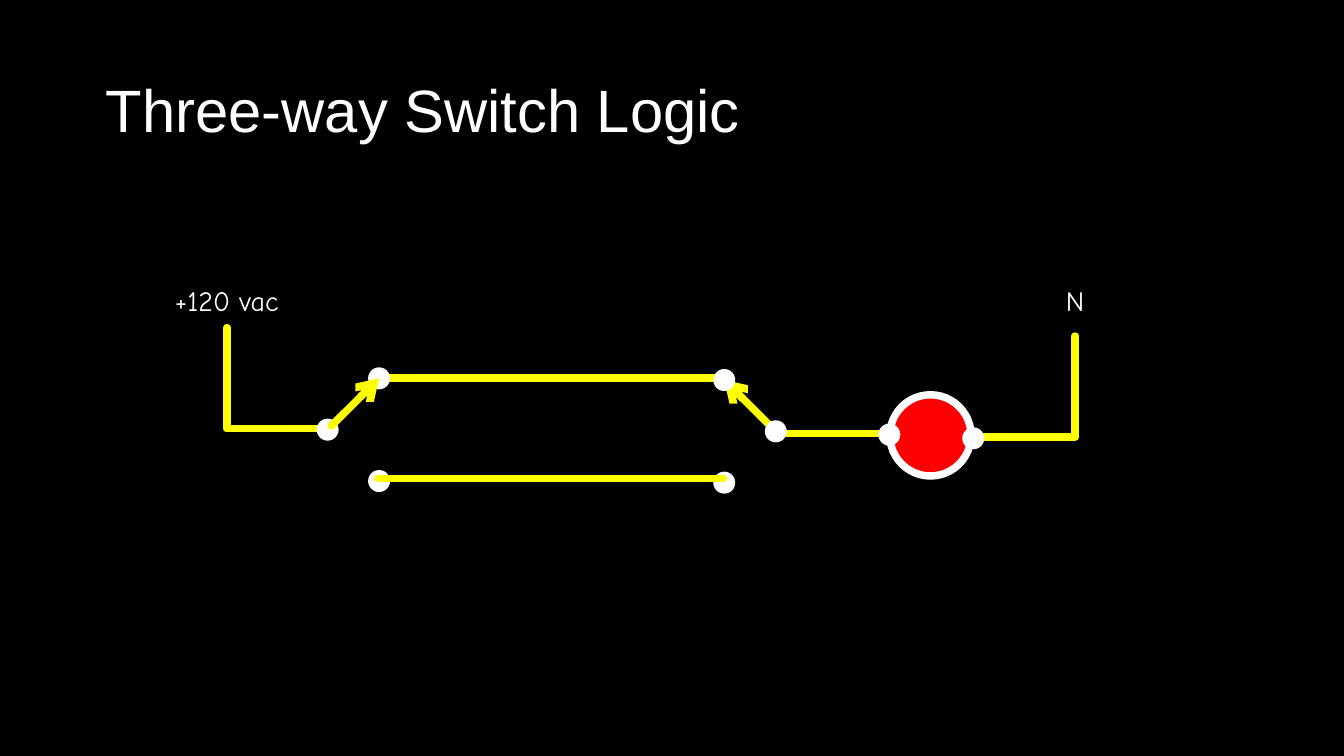
from pptx import Presentation
from pptx.dml.color import RGBColor
from pptx.enum.shapes import MSO_CONNECTOR as CONN, MSO_SHAPE as SHAPE
from pptx.enum.text import MSO_ANCHOR as ANCHOR, MSO_AUTO_SIZE as FIT, PP_ALIGN as ALIGN
from pptx.oxml.ns import qn
from pptx.util import Pt
from lxml.etree import SubElement

WHITE, YELLOW, RED, BLACK = "FFFFFF", "FFFF00", "FF0000", "000000"
DOT = 10.8


def color(value):
    """Turn a hex string into a colour."""
    return RGBColor.from_string(value)


def write(tf, text, para, font, ink):
    """Put one formatted paragraph into a text frame."""
    p = tf.paragraphs[0]
    r = p.add_run()
    r.text = text
    for target, values in ((p, para), (r.font, font)):
        for name, value in values.items():
            setattr(target, name, value)
    r.font.color.rgb = color(ink)


def wire(s, start, end, arrow=False):
    """Draw a yellow round-capped wire between two points."""
    c = s.shapes.add_connector(CONN.STRAIGHT, *map(Pt, (*start, *end)))
    c.line.width = Pt(4)
    c.line.color.rgb = color(YELLOW)
    ln = c.line._get_or_add_ln()
    ln.set("cap", "rnd")
    SubElement(ln, qn("a:round"))
    if arrow:
        SubElement(ln, qn("a:tailEnd"), type="arrow")
    SubElement(c._element.spPr, qn("a:effectLst"))


def circle(s, center, size=DOT, fill=WHITE, width=1):
    """Draw a white-edged circle around a centre."""
    x, y = center
    sp = s.shapes.add_shape(SHAPE.OVAL, Pt(x - size / 2), Pt(y - size / 2), Pt(size), Pt(size))
    sp.shadow.inherit = False
    sp.fill.solid()
    sp.fill.fore_color.rgb = color(fill)
    sp.line.color.rgb = color(WHITE)
    sp.line.width = Pt(width)


def title(s, box, text):
    """Place and format the title placeholder."""
    sp = s.shapes.title
    sp.left, sp.top, sp.width, sp.height = map(Pt, box)
    tf = sp.text_frame
    tf.word_wrap, tf.vertical_anchor = True, ANCHOR.MIDDLE
    write(tf, text, {"alignment": ALIGN.LEFT, "line_spacing": 0.9},
          {"size": Pt(32), "name": "Arial"}, WHITE)


def label(s, box, text):
    """Place a centred terminal label."""
    tf = s.shapes.add_textbox(*map(Pt, box)).text_frame
    tf.word_wrap, tf.auto_size = True, FIT.SHAPE_TO_FIT_TEXT
    write(tf, text, {"alignment": ALIGN.CENTER}, {"size": Pt(15), "name": "Comic Neue"}, WHITE)


def terminal(s, box, outer_left):
    """Draw an L-shaped supply wire down one side and along the bottom."""
    x, y, w, h = box
    outer, inner = (x, x + w) if outer_left else (x + w, x)
    wire(s, (outer, y), (outer, y + h))
    wire(s, (outer, y + h), (inner, y + h))


def switch(s, box, common_left):
    """Draw a two-throw switch with its arm on the upper contact."""
    x, y, w, h = box
    common_x, throw_x = (x, x + w) if common_left else (x + w, x)
    common = common_x, y + h / 2
    step = 2 if common_left else -2
    arm = (common_x + step, common[1] - 2), (throw_x, y)
    if not common_left:
        wire(s, *arm, arrow=True)
    for center in (common, (throw_x, y), (throw_x, y + h)):
        circle(s, center)
    if common_left:
        wire(s, *arm, arrow=True)


def lamp(s, box):
    """Draw the lamp with a contact on each side."""
    x, y, w, h = box
    middle = y + h / 2
    circle(s, (x + w / 2, middle), w, RED, 4)
    circle(s, (x - 0.3, middle - 0.4))
    circle(s, (x + w + 1.2, middle + 1.6))


def main():
    """Build the slide and save it."""
    prs = Presentation()
    prs.slide_width, prs.slide_height = Pt(720), Pt(405)
    s = prs.slides.add_slide(prs.slide_layouts[5])
    s.background.fill.solid()
    s.background.fill.fore_color.rgb = color(BLACK)

    title(s, (49.5, 21.6, 621, 78.3), "Three-way Switch Logic")
    wire(s, (421.2, 232.4), (475.2, 232.4))
    wire(s, (202.5, 202.5), (387.5, 202.5))
    terminal(s, (121.5, 175.5, 54, 54), True)
    switch(s, (175.5, 202.7, 27.6, 55), True)
    switch(s, (388, 203.6, 27.6, 55), False)
    wire(s, (202.5, 256.4), (387.5, 256.4))
    terminal(s, (522, 180, 54, 54), False)
    lamp(s, (476.7, 211.5, 43.5, 43.5))
    for left, text in ((81, "+120 vac"), (535.5, "N")):
        label(s, (left, 148.5, 81, 25.2), text)

    prs.save("out.pptx")


if __name__ == "__main__":
    main()
